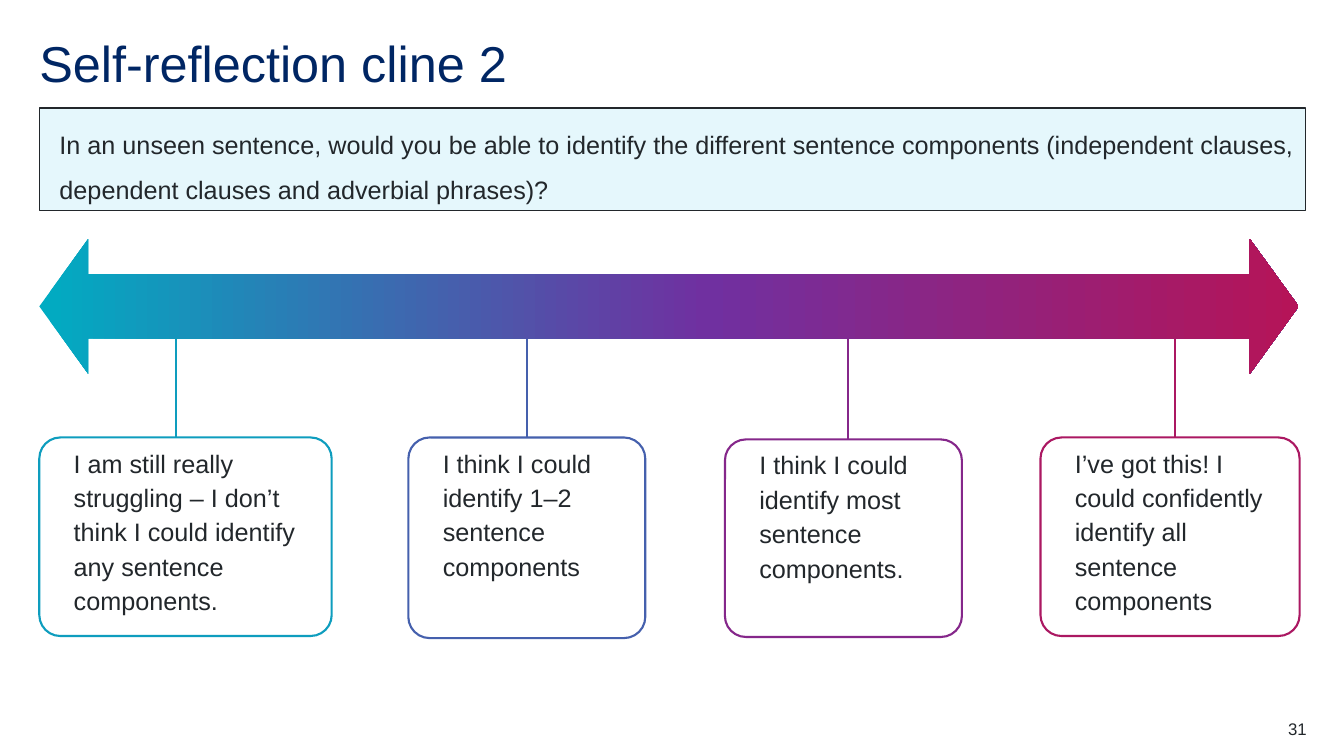
from copy import deepcopy
from dataclasses import dataclass

from lxml.etree import SubElement
from pptx import Presentation
from pptx.dml.color import RGBColor
from pptx.enum.shapes import MSO_CONNECTOR, MSO_SHAPE
from pptx.enum.text import MSO_ANCHOR, PP_ALIGN
from pptx.oxml.ns import qn
from pptx.util import Inches, Pt


@dataclass(frozen=True)
class Theme:
    font: str = "Arial"
    navy: str = "002664"
    ink: str = "22272B"
    pale: str = "E5F7FC"
    spectrum: tuple = ((0, "00ACC2"), (0.53, "7030A0"), (1, "B51458"))
    levels: tuple = ("0E9DBE", "4560AD", "85278A", "AB1862")
    title_size: int = 36
    body_size: int = 18
    number_size: int = 12


def apply_format(target, values):
    for name, value in values.items():
        setattr(target, name, value)


class ClineSlide:
    def __init__(self, deck, theme):
        self.theme = theme
        self.shapes = deck.slides.add_slide(deck.slide_layouts[6]).shapes

    def add_wording(self, shape, wording, size, color, margins=(0, 0, 0, 0),
                    indent=0, anchor=MSO_ANCHOR.TOP, **paragraph_format):
        frame = shape.text_frame
        left, top, right, bottom = map(Inches, margins)
        apply_format(frame, {
            "word_wrap": True, "vertical_anchor": anchor,
            "margin_left": left, "margin_top": top,
            "margin_right": right, "margin_bottom": bottom,
        })
        paragraph = frame.paragraphs[0]
        apply_format(paragraph, {"alignment": PP_ALIGN.LEFT, **paragraph_format})
        if indent:
            paragraph._p.get_or_add_pPr().set("marL", str(Inches(indent)))
        run = paragraph.add_run()
        run.text = wording
        apply_format(run.font, {"name": self.theme.font, "size": Pt(size)})
        run.font.color.rgb = RGBColor.from_string(color)

    def text(self, bounds, wording, size, color, **text_format):
        label = self.shapes.add_textbox(*map(Inches, bounds))
        self.add_wording(label, wording, size, color, **text_format)

    def outline(self, line, color, width):
        line.color.rgb = RGBColor.from_string(color)
        line.width = Pt(width)

    def shape(self, preset, bounds, adjustments=()):
        figure = self.shapes.add_shape(preset, *map(Inches, bounds))
        figure.shadow.inherit = False
        for index, value in enumerate(adjustments):
            figure.adjustments[index] = value
        return figure

    def question(self, bounds, wording):
        panel = self.shape(MSO_SHAPE.RECTANGLE, bounds)
        panel.fill.solid()
        panel.fill.fore_color.rgb = RGBColor.from_string(self.theme.pale)
        self.outline(panel.line, self.theme.ink, 1)
        self.add_wording(panel, wording, self.theme.body_size, self.theme.ink,
                         indent=0.2, anchor=MSO_ANCHOR.MIDDLE,
                         line_spacing=1.5, space_after=Pt(12))

    def cline(self, bounds):
        arrow = self.shape(MSO_SHAPE.LEFT_RIGHT_ARROW, bounds, (0.475, 0.362))
        arrow.line.fill.background()
        arrow.fill.gradient()
        arrow.fill.gradient_angle = 0
        stop_list = arrow._element.spPr.find(qn("a:gradFill")).find(qn("a:gsLst"))
        stop_list.append(deepcopy(stop_list[-1]))
        for stop, (position, color) in zip(arrow.fill.gradient_stops, self.theme.spectrum):
            stop.position = position
            stop.color.rgb = RGBColor.from_string(color)

    def answer(self, bounds, wording, color):
        card = self.shape(MSO_SHAPE.ROUNDED_RECTANGLE, bounds, (0.106,))
        card.fill.background()
        self.outline(card.line, color, 1.5)
        self.add_wording(card, wording, self.theme.body_size, self.theme.ink,
                         margins=(0.16, 0, 0.16, 0.07), indent=0.12, line_spacing=1.14)

    def stem(self, x, top, bottom, color):
        link = self.shapes.add_connector(
            MSO_CONNECTOR.STRAIGHT, *map(Inches, (x, top, x, bottom)))
        self.outline(link.line, color, 1.5)
        SubElement(link._element.spPr, qn("a:effectLst"))


ANSWERS = (
    ((0.39, 4.34, 2.9, 1.97), 1.75,
     "I am still really struggling – I don’t think I could identify any sentence components."),
    ((4.05, 4.34, 2.35, 1.99), 5.23,
     "I think I could identify 1–2 sentence components"),
    ((7.19, 4.36, 2.35, 1.96), 8.41,
     "I think I could identify most sentence components."),
    ((10.32, 4.34, 2.57, 1.97), 11.65,
     "I’ve got this! I could confidently identify all sentence components"),
)


def main():
    deck = Presentation()
    apply_format(deck, {"slide_width": Inches(13.33), "slide_height": Inches(7.5)})
    theme = Theme()
    slide = ClineSlide(deck, theme)
    slide.text((0.39, 0.39, 12.56, 0.6), "Self-reflection cline 2",
               theme.title_size, theme.navy, line_spacing=0.9)
    slide.question(
        (0.39, 1.07, 12.56, 1.02),
        "In an unseen sentence, would you be able to identify the different sentence "
        "components (independent clauses, dependent clauses and adverbial phrases)?")
    slide.cline((0.39, 2.37, 12.49, 1.34))
    for (bounds, stem_x, wording), color in zip(ANSWERS, theme.levels):
        slide.answer(bounds, wording, color)
        slide.stem(stem_x, 3.36, bounds[1], color)
    slide.text((12.17, 7.13, 0.79, 0.2), "31", theme.number_size, theme.ink,
               alignment=PP_ALIGN.RIGHT)
    deck.save("out.pptx")


if __name__ == "__main__":
    main()
